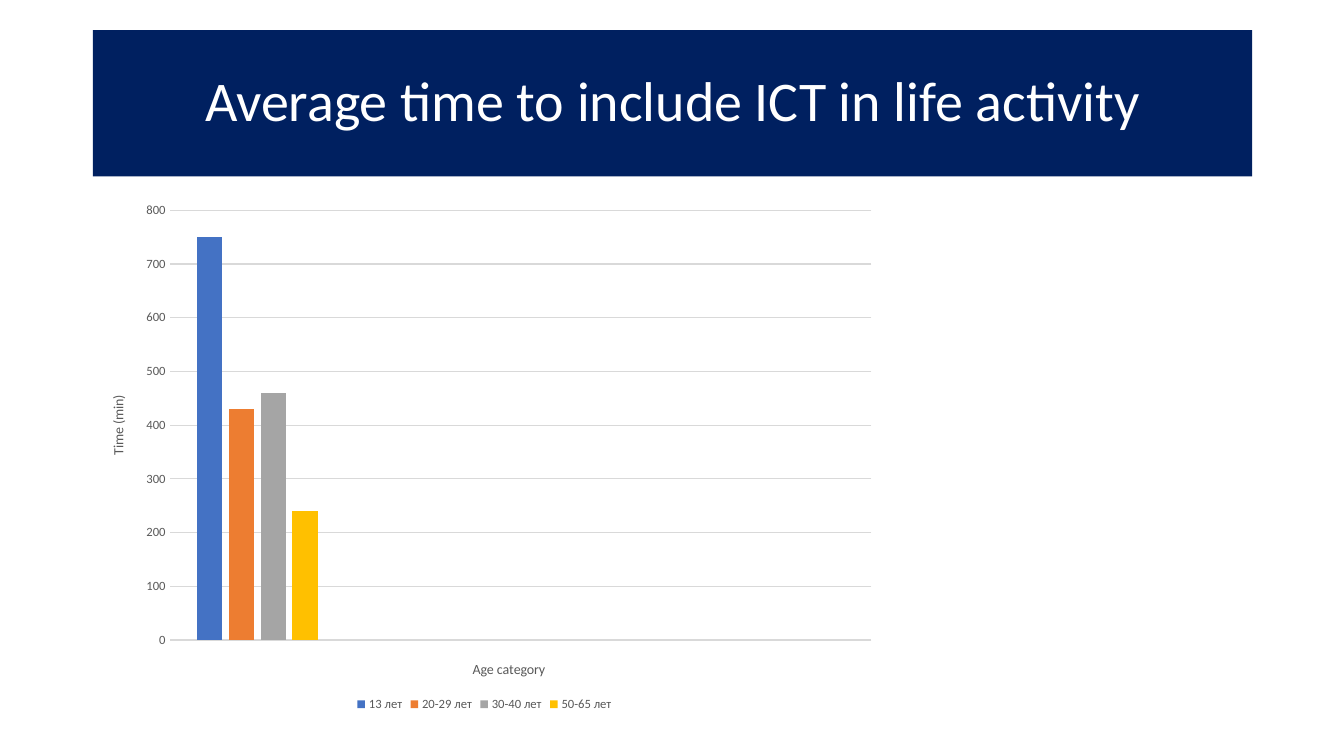
import pptx
import pptx.chart.data
import pptx.dml.color
import pptx.enum.chart
import pptx.enum.text
import pptx.oxml
import pptx.util
from pptx.util import Inches

RGBColor = pptx.dml.color.RGBColor
NAVY = RGBColor(0x00, 0x20, 0x60)
WHITE = RGBColor(0xFF, 0xFF, 0xFF)
TEXT_GREY = RGBColor(0x59, 0x59, 0x59)
GRID_GREY = RGBColor(0xD9, 0xD9, 0xD9)
BLUE = RGBColor(0x44, 0x72, 0xC4)
ORANGE = RGBColor(0xED, 0x7D, 0x31)
GREY = RGBColor(0xA5, 0xA5, 0xA5)
GOLD = RGBColor(0xFF, 0xC0, 0x00)

# Age group, minutes, bar colour
AGE_GROUPS = [
    ("13 лет", 750, BLUE),
    ("20-29 лет", 430, ORANGE),
    ("30-40 лет", 460, GREY),
    ("50-65 лет", 240, GOLD),
]


class SlideBuilder:
    font_name = "Calibri"

    def __init__(self, presentation):
        self.slide = presentation.slides.add_slide(presentation.slide_layouts[5])

    def style(self, font, size, color):
        font.name = self.font_name
        font.size = pptx.util.Pt(size)
        font.bold = False
        font.color.rgb = color

    def title(self, text, left, top, width, height):
        banner = self.slide.shapes.title
        banner.left, banner.top = Inches(left), Inches(top)
        banner.width, banner.height = Inches(width), Inches(height)
        banner.fill.solid()
        banner.fill.fore_color.rgb = NAVY
        frame = banner.text_frame
        frame.text = text
        frame.word_wrap = True
        frame.auto_size = pptx.enum.text.MSO_AUTO_SIZE.NONE
        frame.vertical_anchor = pptx.enum.text.MSO_ANCHOR.MIDDLE
        paragraph = frame.paragraphs[0]
        paragraph.alignment = pptx.enum.text.PP_ALIGN.CENTER
        paragraph.line_spacing = 0.9
        self.style(paragraph.font, 40, WHITE)

    def axis_title(self, axis, text):
        frame = axis.axis_title.text_frame
        frame.text = text
        self.style(frame.paragraphs[0].font, 10, TEXT_GREY)

    def plot_layout(self, chart, x, y, w, h):
        sizes = "".join(f'<c:{key} val="{value}"/>'
                        for key, value in (("x", x), ("y", y), ("w", w), ("h", h)))
        layout = pptx.oxml.parse_xml(
            '<c:layout xmlns:c="http://schemas.openxmlformats.org/drawingml/2006/chart">'
            '<c:manualLayout><c:layoutTarget val="inner"/>'
            '<c:xMode val="edge"/><c:yMode val="edge"/>'
            f'{sizes}</c:manualLayout></c:layout>')
        plot_area = chart.element.chart.plotArea
        for automatic in plot_area.findall(layout.tag):
            plot_area.remove(automatic)
        plot_area.insert(0, layout)

    def column_chart(self, groups, left, top, width, height):
        # One filled category, then three empty ones
        minutes_by_age = pptx.chart.data.CategoryChartData()
        minutes_by_age.categories = ["1", "", "", ""]
        for name, minutes, _ in groups:
            minutes_by_age.add_series(name, [minutes, None, None, None])
        chart = self.slide.shapes.add_chart(
            pptx.enum.chart.XL_CHART_TYPE.COLUMN_CLUSTERED,
            Inches(left), Inches(top), Inches(width), Inches(height),
            minutes_by_age).chart
        chart.has_title = False
        self.style(chart.font, 10, TEXT_GREY)

        # Bars
        bars = chart.plots[0]
        bars.gap_width, bars.overlap = 219, -27
        bars.vary_by_categories = False
        for series, (_, _, color) in zip(bars.series, groups):
            series.format.fill.solid()
            series.format.fill.fore_color.rgb = color

        # Axes
        ages, minutes = chart.category_axis, chart.value_axis
        ages.visible = False
        self.axis_title(ages, "Age category")
        self.axis_title(minutes, "Time (min)")
        minutes.minimum_scale, minutes.maximum_scale = 0, 800
        minutes.major_unit = 100
        minutes.major_tick_mark = pptx.enum.chart.XL_TICK_MARK.NONE
        minutes.format.line.fill.background()
        self.style(minutes.tick_labels.font, 9, TEXT_GREY)
        grid = minutes.major_gridlines.format.line
        grid.color.rgb = GRID_GREY
        grid.width = pptx.util.Pt(0.75)

        # Legend
        chart.has_legend = True
        chart.legend.position = pptx.enum.chart.XL_LEGEND_POSITION.BOTTOM
        chart.legend.include_in_layout = False
        self.style(chart.legend.font, 9, TEXT_GREY)
        self.plot_layout(chart, 0.098, 0.017, 0.896, 0.836)


def main():
    presentation = pptx.Presentation()
    presentation.slide_width = Inches(13.33)
    presentation.slide_height = Inches(7.5)
    builder = SlideBuilder(presentation)
    builder.column_chart(AGE_GROUPS, 0.92, 2, 7.77, 5.1)
    builder.title("Average time to include ICT in life activity", 0.92, 0.3, 11.5, 1.45)
    presentation.save("out.pptx")


if __name__ == "__main__":
    main()
